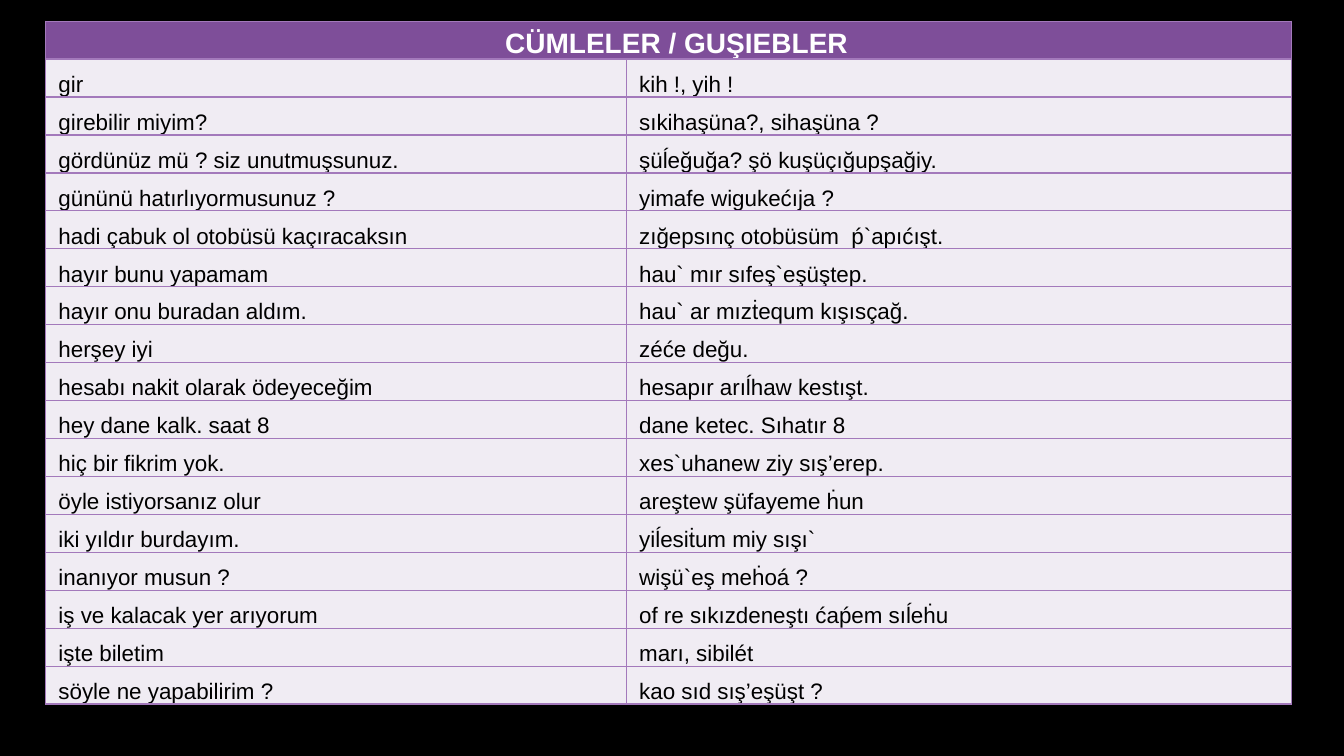
from typing import NamedTuple

from lxml import etree
from pptx import Presentation
from pptx.dml.color import RGBColor
from pptx.enum.text import MSO_ANCHOR, PP_ALIGN
from pptx.oxml.ns import qn
from pptx.table import _Cell
from pptx.util import Inches, Pt

BOTTOM = MSO_ANCHOR.BOTTOM
LEFT, CENTER = PP_ALIGN.LEFT, PP_ALIGN.CENTER

BORDER_COLOR = "A379BB"
COLUMN_WIDTHS = (5.76, 6.6)
TABLE_HEIGHT = 6.78


class CellStyle(NamedTuple):
    fill: str
    color: str
    size: int
    bold: bool
    align: PP_ALIGN
    indent: float


class Phrase(NamedTuple):
    turkish: str
    translation: str


HEADING = CellStyle("7E4E99", "FFFFFF", 20, True, CENTER, 0.17)
BODY = CellStyle("F0ECF3", "000000", 16, False, LEFT, 0.13)

PHRASES = [
    Phrase("gir", "kih !, yih !"),
    Phrase("girebilir miyim?", "sıkihaşüna?, sihaşüna ?"),
    Phrase("gördünüz mü ? siz unutmuşsunuz.", "şüĺeğuğa? şö kuşüçığupşağiy."),
    Phrase("gününü hatırlıyormusunuz ?", "yimafe wigukećıja ?"),
    Phrase("hadi çabuk ol otobüsü kaçıracaksın", "zığepsınç otobüsüm  ṕ`apıćışt."),
    Phrase("hayır bunu yapamam", "hau` mır sıfeş`eşüştep."),
    Phrase("hayır onu buradan aldım.", "hau` ar mızṫequm kışısçağ."),
    Phrase("herşey iyi", "zéće değu."),
    Phrase("hesabı nakit olarak ödeyeceğim", "hesapır arıĺhaw kestışt."),
    Phrase("hey dane kalk. saat 8", "dane ketec. Sıhatır 8"),
    Phrase("hiç bir fikrim yok.", "xes`uhanew ziy sış’erep."),
    Phrase("öyle istiyorsanız olur", "areştew şüfayeme ḣun"),
    Phrase("iki yıldır burdayım.", "yiĺesiṫum miy sışı`"),
    Phrase("inanıyor musun ?", "wişü`eş meḣoá ?"),
    Phrase("iş ve kalacak yer arıyorum", "of re sıkızdeneştı ćaṕem sıĺeḣu"),
    Phrase("işte biletim", "marı, sibilét"),
    Phrase("söyle ne yapabilirim ?", "kao sıd sış’eşüşt ?"),
]


def rgb(hex_color: str) -> RGBColor:
    return RGBColor.from_string(hex_color)


def add_borders(cell: _Cell) -> None:
    properties = cell._tc.get_or_add_tcPr()
    for side in ("lnL", "lnR", "lnT", "lnB"):
        line = etree.SubElement(properties, qn(f"a:{side}"), w=str(Pt(1)))
        fill = etree.SubElement(line, qn("a:solidFill"))
        etree.SubElement(fill, qn("a:srgbClr"), val=BORDER_COLOR)


def format_cell(cell: _Cell, style: CellStyle) -> None:
    add_borders(cell)
    cell.fill.solid()
    cell.fill.fore_color.rgb = rgb(style.fill)
    cell.vertical_anchor = BOTTOM
    cell.margin_left = Inches(style.indent)
    cell.margin_right = cell.margin_top = Inches(0.01)
    cell.margin_bottom = 0


def write_cell(cell: _Cell, text: str, style: CellStyle) -> None:
    paragraph = cell.text_frame.paragraphs[0]
    paragraph.alignment = style.align
    run = paragraph.add_run()
    run.text = text
    run.font.name = "Arial"
    run.font.size = Pt(style.size)
    run.font.bold = style.bold
    run.font.color.rgb = rgb(style.color)


def main() -> None:
    presentation = Presentation()
    presentation.slide_width = Inches(13.33)
    presentation.slide_height = Inches(7.5)
    slide = presentation.slides.add_slide(presentation.slide_layouts[6])
    slide.background.fill.solid()
    slide.background.fill.fore_color.rgb = rgb("000000")

    phrasebook = slide.shapes.add_table(
        len(PHRASES) + 1, len(COLUMN_WIDTHS), Inches(0.45), Inches(0.21),
        Inches(sum(COLUMN_WIDTHS)), Inches(TABLE_HEIGHT),
    ).table
    for column, width in zip(phrasebook.columns, COLUMN_WIDTHS):
        column.width = Inches(width)

    heading = phrasebook.cell(0, 0)
    heading.merge(phrasebook.cell(0, 1))
    for column in range(len(COLUMN_WIDTHS)):
        format_cell(phrasebook.cell(0, column), HEADING)
    write_cell(heading, "CÜMLELER / GUŞIEBLER", HEADING)

    for row, phrase in enumerate(PHRASES, start=1):
        for column, text in enumerate(phrase):
            cell = phrasebook.cell(row, column)
            format_cell(cell, BODY)
            write_cell(cell, text, BODY)

    presentation.save("out.pptx")


if __name__ == "__main__":
    main()
